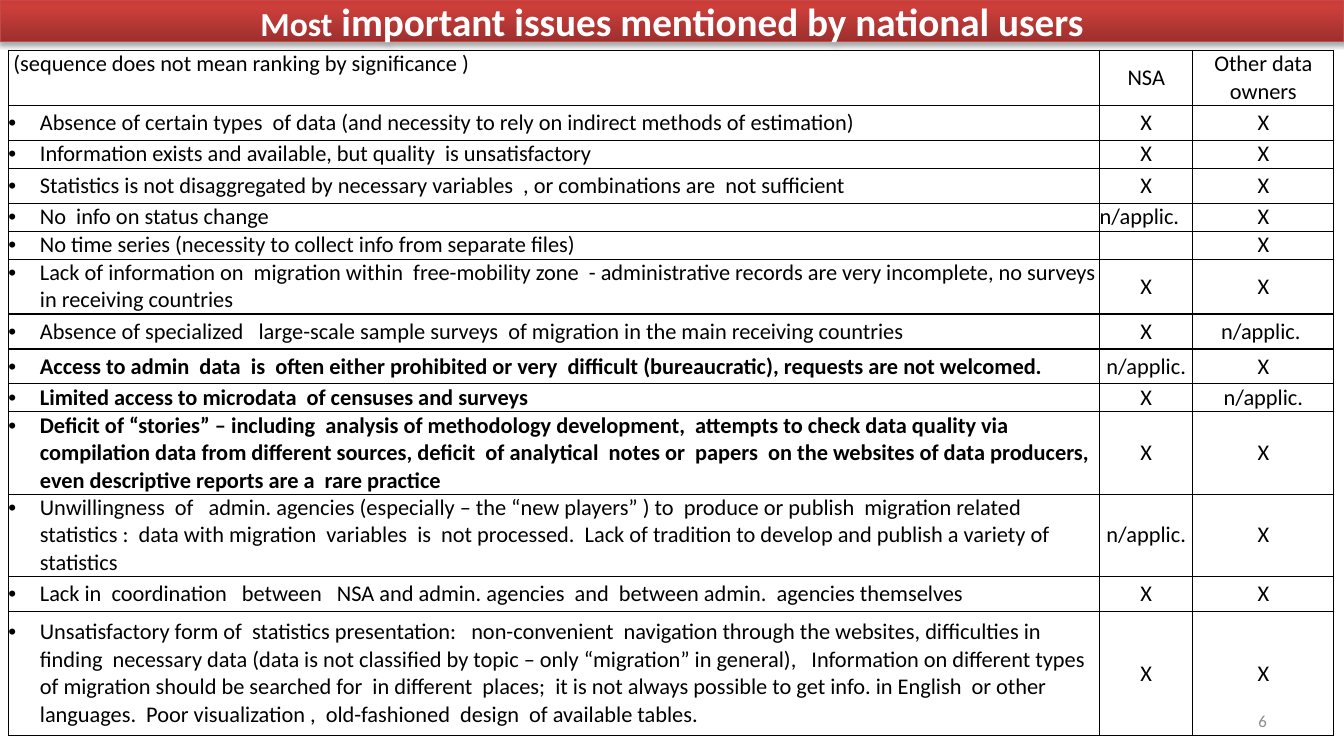
from lxml.etree import SubElement
from pptx import Presentation
from pptx.dml.color import RGBColor
from pptx.enum.text import MSO_ANCHOR as Anchor, PP_ALIGN as Align
from pptx.oxml import parse_xml
from pptx.oxml.ns import nsdecls, qn
from pptx.util import Pt

FONT = "Calibri"
COLUMN_WIDTHS = (779.5, 66.5, 100.8)
HEADER = (" (sequence does not mean ranking by significance )", "NSA", "Other data owners")
NOT_APPLICABLE = "n/applic."
ISSUES = [
    (25, "Absence of certain types  of data (and necessity to rely on indirect methods of estimation)", "X", "X"),
    (20, "Information exists and available, but quality  is unsatisfactory", "X", "X"),
    (25, "Statistics is not disaggregated by necessary variables  , or combinations are  not sufficient", "X", "X"),
    (20, "No  info on status change", NOT_APPLICABLE, "X"),
    (20, "No time series (necessity to collect info from separate files)", "", "X"),
    (39.2, "Lack of information on  migration within  free-mobility zone  - administrative records are very "
     "incomplete, no surveys in receiving countries", "X", "X"),
    (25, "Absence of specialized   large-scale sample surveys  of migration in the main receiving countries",
     "X", NOT_APPLICABLE + " "),
    (25, "Access to admin  data  is  often either prohibited or very  difficult (bureaucratic), "
     "requests are not welcomed.", NOT_APPLICABLE, "X"),
    (20, "Limited access to microdata  of censuses and surveys", "X", NOT_APPLICABLE),
    (58.8, "Deficit of “stories” – including  analysis of methodology development,  attempts to check data "
     "quality via compilation data from different sources, deficit  of analytical  notes or  papers  on the "
     "websites of data producers,  even descriptive reports are a  rare practice", "X", "X"),
    (58.8, "Unwillingness  of   admin. agencies (especially – the “new players” ) to  produce or publish  "
     "migration related statistics :  data with migration  variables  is  not processed.  Lack of tradition "
     "to develop and publish a variety of statistics", NOT_APPLICABLE, "X"),
    (25, "Lack in  coordination   between   NSA and admin. agencies  and  between admin.  agencies themselves",
     "X", "X"),
    (88.5, "Unsatisfactory form of  statistics presentation:   non-convenient  navigation through the websites, "
     "difficulties in  finding  necessary data (data is not classified by topic – only “migration” in general),   "
     "Information on different types of migration should be searched for  in different  places;  it is not "
     "always possible to get info. in English  or other languages.  Poor visualization ,  old-fashioned  "
     "design  of available tables.", "X", "X"),
]
BOLD_ISSUES = (8, 9, 10)
LEFT_ALIGNED_MARK = (4, 1)


def color(value):
    return RGBColor.from_string(value)


def set_font(font, size, value, bold=False):
    font.name = FONT
    font.size = Pt(size)
    font.bold = bold
    font.color.rgb = color(value)


def add_title(slide):
    title = slide.shapes.title
    title.left, title.top, title.width, title.height = Pt(0), Pt(0), Pt(960), Pt(30)
    properties = title.fill._xPr
    properties.append(parse_xml(
        f'<a:gradFill {nsdecls("a")} rotWithShape="1"><a:gsLst>'
        '<a:gs pos="0"><a:srgbClr val="9C2F2D"/></a:gs>'
        '<a:gs pos="80000"><a:srgbClr val="CB3E3A"/></a:gs>'
        '<a:gs pos="100000"><a:srgbClr val="CE3B37"/></a:gs>'
        '</a:gsLst><a:lin ang="16200000" scaled="0"/></a:gradFill>'))
    title.line.color.rgb = color("BF4C48")
    title.line.width = Pt(0.75)
    properties.append(parse_xml(
        f'<a:effectLst {nsdecls("a")}><a:outerShdw blurRad="40000" dist="23000" dir="5400000" '
        'rotWithShape="0"><a:srgbClr val="000000"><a:alpha val="35000"/></a:srgbClr>'
        '</a:outerShdw></a:effectLst>'))
    frame = title.text_frame
    frame.vertical_anchor = Anchor.MIDDLE
    paragraph = frame.paragraphs[0]
    paragraph.alignment = Align.CENTER
    for text, size in (("Most", 24), (" important issues mentioned by national users", 28)):
        run = paragraph.add_run()
        run.text = text
        set_font(run.font, size, "FFFFFF", True)


def add_page_number(slide):
    box = slide.shapes.add_textbox(Pt(688), Pt(500.5), Pt(224), Pt(28.8))
    frame = box.text_frame
    frame.word_wrap = True
    frame.vertical_anchor = Anchor.MIDDLE
    paragraph = frame.paragraphs[0]
    paragraph.text = "6"
    paragraph.alignment = Align.RIGHT
    set_font(paragraph.font, 12, "8C8C8C")


def add_borders(cell):
    properties = cell._tc.get_or_add_tcPr()
    for position, side in enumerate(("lnL", "lnR", "lnT", "lnB")):
        properties.insert(position, parse_xml(
            f'<a:{side} {nsdecls("a")} w="12700"><a:solidFill><a:srgbClr val="000000"/>'
            f'</a:solidFill></a:{side}>'))


def add_bullet(paragraph):
    properties = paragraph._p.get_or_add_pPr()
    properties.set("marL", str(Pt(22.5)))
    properties.set("indent", str(Pt(-22.5)))
    SubElement(properties, qn("a:buFont"), typeface="Arial")
    SubElement(properties, qn("a:buChar"), char="•")


def fill_cell(cell, text, alignment, anchor=Anchor.MIDDLE, bold=False, bullet=False):
    cell.margin_left = cell.margin_right = cell.margin_top = cell.margin_bottom = 0
    cell.vertical_anchor = anchor
    cell.fill.background()
    add_borders(cell)
    paragraph = cell.text_frame.paragraphs[0]
    paragraph.text = text
    paragraph.alignment = alignment
    if bullet:
        add_bullet(paragraph)
    set_font(paragraph.font, 16, "000000", bold)


def add_issue_table(slide):
    rows = [(39.2, *HEADER), *ISSUES]
    frame = slide.shapes.add_table(
        len(rows), len(COLUMN_WIDTHS), Pt(6), Pt(36),
        Pt(sum(COLUMN_WIDTHS)), Pt(sum(row[0] for row in rows)))
    table = frame.table
    table.first_row = table.horz_banding = False
    for column, width in zip(table.columns, COLUMN_WIDTHS):
        column.width = Pt(width)
    for row, (height, issue, *marks) in enumerate(rows):
        table.rows[row].height = Pt(height)
        fill_cell(table.cell(row, 0), issue, Align.LEFT,
                  anchor=Anchor.MIDDLE if row else Anchor.TOP,
                  bold=row in BOLD_ISSUES, bullet=row > 0)
        for column, mark in enumerate(marks, 1):
            alignment = Align.LEFT if (row, column) == LEFT_ALIGNED_MARK else Align.CENTER
            fill_cell(table.cell(row, column), mark, alignment)


def main():
    presentation = Presentation()
    presentation.slide_width, presentation.slide_height = Pt(960), Pt(540)
    slide = presentation.slides.add_slide(presentation.slide_layouts[5])
    add_title(slide)
    add_page_number(slide)
    add_issue_table(slide)
    presentation.save("out.pptx")


if __name__ == "__main__":
    main()
